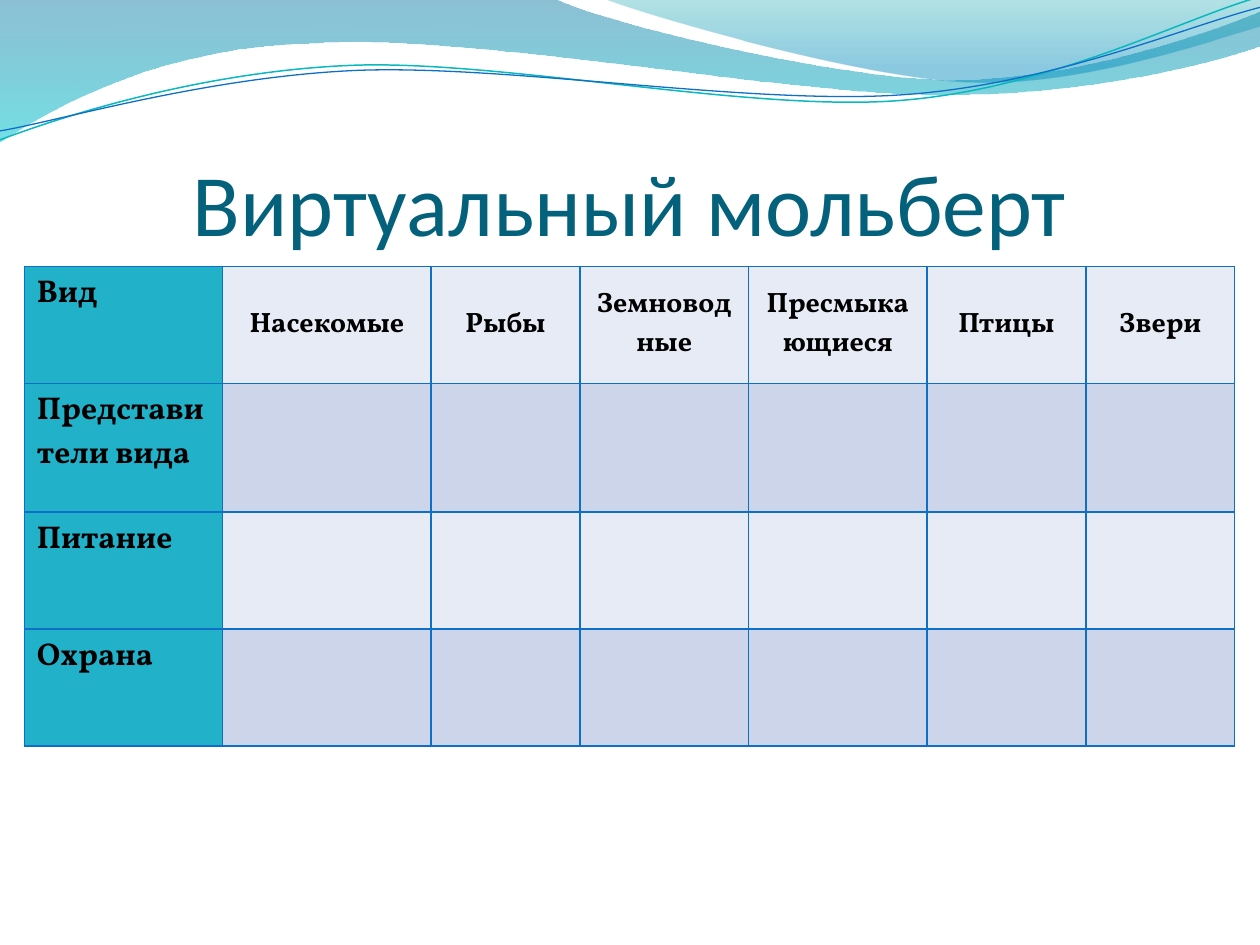
from lxml.etree import SubElement
from pptx import Presentation
from pptx.dml.color import RGBColor
from pptx.enum.text import MSO_ANCHOR as Anchor, PP_ALIGN as Align
from pptx.oxml.ns import qn
from pptx.util import Cm, Pt

TITLE = "Виртуальный мольберт"
SPECIES = ["Насекомые", "Рыбы", "Земноводные", "Пресмыкающиеся", "Птицы", "Звери"]
TOPICS = ["Вид", "Представители вида", "Питание", "Охрана"]
COLUMN_WIDTHS = [4, 4.2, 3, 3.4, 3.6, 3.2, 3]
ROW_HEIGHTS = [2.36, 2.59, 2.36, 2.36]
TOPIC_FILL, BAND_FILLS = "21B2C9", ["E7EBF5", "CCD5EA"]
BORDER = "0F6FC6"

TITLE_FONT = {"name": "Calibri", "size": Pt(50)}
TOPIC_FONT = {"name": "Vollkorn", "size": Pt(18), "bold": True}
SPECIES_FONT = {**TOPIC_FONT, "size": Pt(16)}

WAVES = [
    {"start": (0, 0),
     "segments": [(11.18, -0.03), (12.09, 0.43, 16.87, 1.6, 19.25, 1.6),
                  (21.67, 1.6, 24.33, 0.66, 25.4, 0.23), (25.43, 0.91),
                  (24.97, 1.12, 22.1, 1.93, 18.95, 1.91),
                  (15.8, 1.91, 9.7, 0.71, 6.53, 0.86),
                  (3.25, 0.91, 1.17, 2.11, -0.03, 2.87), (0, 0)],
     "stops": [(0, "0074A1", 45), (1, "00C6CF", 55)]},
    {"start": (12.17, -0.03),
     "segments": [(12.93, 0.28, 17.32, 1.57, 19.53, 1.65),
                  (21.74, 1.75, 24.41, 0.81, 25.4, 0.53), (25.4, 0),
                  (12.17, -0.03)],
     "stops": [(0, "00A1A9", 30), (0.8, "008BBF", 45)]},
    {"start": (0, 2.82),
     "segments": [(1.22, 2.36, 4.01, 1.45, 7.04, 1.32),
                  (10.03, 1.19, 15.06, 2.26, 18.11, 2.03),
                  (21.16, 1.8, 23.83, 0.38, 25.35, -0.05)],
     "line": ("0AB8BF", 0.85)},
    {"start": (0, 2.64),
     "segments": [(1.19, 2.44, 4.17, 1.55, 7.19, 1.42),
                  (10.24, 1.3, 15.16, 2.13, 18.21, 1.91),
                  (21.23, 1.7, 23.9, 0.53, 25.4, 0.15)],
     "line": ("0F6FC6", 0.75)},
]


def color(value):
    return RGBColor.from_string(value)


def apply(target, values):
    for name, value in values.items():
        setattr(target, name, value)


def write(frame, text, font, ink, align):
    para = frame.paragraphs[0]
    para.alignment = align
    span = para.add_run()
    span.text = text
    apply(span.font, font)
    span.font.color.rgb = color(ink)


def bend(shape, segments):
    straights = list(shape._element.iter(qn("a:lnTo")))
    for straight, segment in zip(straights, segments):
        if len(segment) == 2:
            continue
        outline = straight.getparent()
        curve = SubElement(outline, qn("a:cubicBezTo"))
        for x, y in zip(segment[::2], segment[1::2]):
            SubElement(curve, qn("a:pt"), x=str(Cm(x) - shape.left), y=str(Cm(y) - shape.top))
        outline.replace(straight, curve)


def add_wave(page, wave):
    segments = wave["segments"]
    ends = [tuple(map(Cm, segment[-2:])) for segment in segments]
    builder = page.shapes.build_freeform(*map(Cm, wave["start"]))
    builder.add_line_segments(ends, close="stops" in wave)
    shape = builder.convert_to_shape()
    bend(shape, segments)
    shape.shadow.inherit = False
    if "line" in wave:
        ink, width = wave["line"]
        shape.fill.background()
        shape.line.color.rgb = color(ink)
        shape.line.width = Pt(width)
        return
    shape.line.fill.background()
    shape.fill.gradient()
    shape.fill.gradient_angle = 270
    for stop, (position, ink, opacity) in zip(shape.fill.gradient_stops, wave["stops"]):
        stop.position = position
        stop.color.rgb = color(ink)
    tints = shape._element.spPr.iter(qn("a:srgbClr"))
    for tint, (*_, opacity) in zip(tints, wave["stops"]):
        SubElement(tint, qn("a:alpha"), val=str(opacity * 1000))


def add_title(page):
    box = page.shapes.add_textbox(Cm(1.27), Cm(1.95), Cm(22.86), Cm(3.17))
    apply(box.text_frame, {
        "word_wrap": True, "vertical_anchor": Anchor.BOTTOM,
        "margin_left": 0, "margin_right": 0, "margin_bottom": 0, "margin_top": Cm(0.13),
    })
    write(box.text_frame, TITLE, TITLE_FONT, "04617B", Align.CENTER)


def add_borders(cell):
    properties = cell._tc.get_or_add_tcPr()
    for side in ("lnL", "lnR", "lnT", "lnB"):
        line = SubElement(properties, qn(f"a:{side}"), w=str(Pt(1)))
        fill = SubElement(line, qn("a:solidFill"))
        SubElement(fill, qn("a:srgbClr"), val=BORDER)


def add_species_table(page):
    table = page.shapes.add_table(
        len(ROW_HEIGHTS), len(COLUMN_WIDTHS), Cm(0.49), Cm(5.37),
        Cm(sum(COLUMN_WIDTHS)), Cm(sum(ROW_HEIGHTS)),
    ).table
    apply(table, {"first_row": False, "horz_banding": False})
    for column, width in zip(table.columns, COLUMN_WIDTHS):
        column.width = Cm(width)
    for row, height in zip(table.rows, ROW_HEIGHTS):
        row.height = Cm(height)
    for r, topic in enumerate(TOPICS):
        for c in range(len(COLUMN_WIDTHS)):
            cell = table.cell(r, c)
            add_borders(cell)
            cell.fill.solid()
            cell.fill.fore_color.rgb = color(BAND_FILLS[r % 2] if c else TOPIC_FILL)
            if c == 0:
                write(cell.text_frame, topic, TOPIC_FONT, "000000", Align.LEFT)
            elif r == 0:
                cell.vertical_anchor = Anchor.MIDDLE
                write(cell.text_frame, SPECIES[c - 1], SPECIES_FONT, "000000", Align.CENTER)


def main():
    deck = Presentation()
    apply(deck, {"slide_width": Cm(25.4), "slide_height": Cm(19.05)})
    page = deck.slides.add_slide(deck.slide_layouts[6])
    for wave in WAVES:
        add_wave(page, wave)
    add_title(page)
    add_species_table(page)
    deck.save("out.pptx")


if __name__ == "__main__":
    main()
